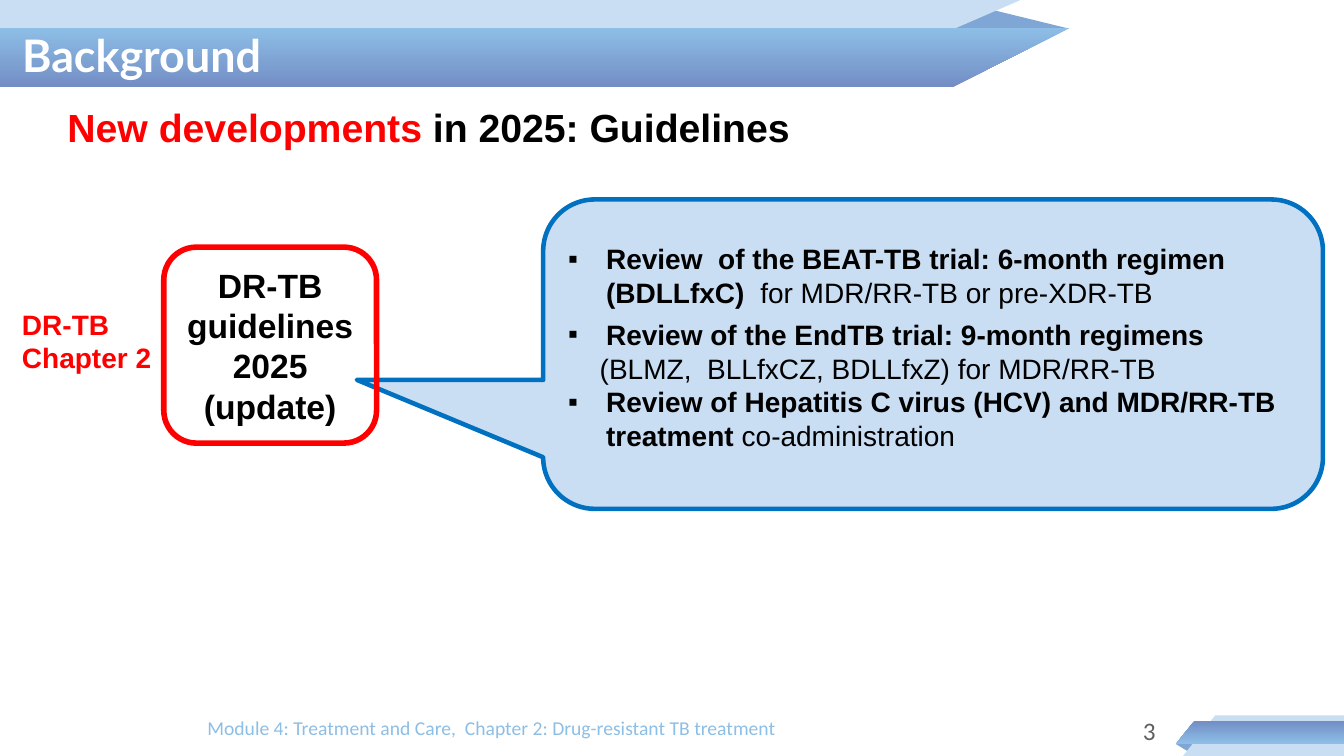
from pptx import Presentation
from pptx.dml.color import RGBColor
from pptx.enum.shapes import MSO_SHAPE
from pptx.enum.text import MSO_ANCHOR, MSO_AUTO_SIZE, PP_ALIGN
from pptx.oxml.ns import qn
from pptx.util import Pt
from lxml.etree import SubElement

COLORS = {
    "pale": "C9DDF3",
    "sky": "8DBEE6",
    "fold": "80A6D5",
    "indigo": "738EC5",
    "outline": "0070C0",
    "red": "FF0000",
    "black": "000000",
    "white": "FFFFFF",
    "gray": "606060",
}


def color(name):
    return RGBColor.from_string(COLORS[name])


def add_ribbon_part(page, points, *fills):
    """Draw a borderless polygon; two fills give a gradient from top to bottom."""
    corners = [(Pt(x), Pt(y)) for x, y in points]
    builder = page.shapes.build_freeform(*corners[0], scale=1.0)
    builder.add_line_segments(corners[1:], close=True)
    part = builder.convert_to_shape()
    part.shadow.inherit = False
    part.line.fill.background()
    if len(fills) == 1:
        part.fill.solid()
        part.fill.fore_color.rgb = color(fills[0])
    else:
        part.fill.gradient()
        part.fill.gradient_angle = 270
        for stop, name in zip(part.fill.gradient_stops, fills):
            stop.color.rgb = color(name)


def place(shape, left, top, width, height):
    shape.left, shape.top = Pt(left), Pt(top)
    shape.width, shape.height = Pt(width), Pt(height)


def set_frame(shape, anchor=MSO_ANCHOR.TOP):
    frame = shape.text_frame
    frame.word_wrap = True
    frame.auto_size = MSO_AUTO_SIZE.NONE
    frame.vertical_anchor = anchor
    return frame


def set_bullet(para, left, bullet=None):
    """Set the indent, with a hanging bullet or none."""
    properties = para._p.get_or_add_pPr()
    properties.set("marL", str(Pt(left)))
    properties.set("indent", str(Pt(-left if bullet else 0)))
    if bullet:
        SubElement(properties, qn("a:buFont")).set("typeface", "Arial")
        SubElement(properties, qn("a:buChar")).set("char", bullet)
    else:
        SubElement(properties, qn("a:buNone"))


def add_runs(para, size, *runs, font="Arial", align=PP_ALIGN.LEFT):
    """Add runs given as (text, colour name, bold)."""
    para.alignment = align
    para.space_before = Pt(0)
    for text, name, bold in runs:
        span = para.add_run()
        span.text = text
        span.font.name = font
        span.font.size = Pt(size)
        span.font.bold = bold
        span.font.color.rgb = color(name)


def add_label(page, area, size, lines, name, bold=False, font="Arial", align=PP_ALIGN.LEFT):
    box = page.shapes.add_textbox(*map(Pt, area))
    frame = set_frame(box)
    for index, line in enumerate(lines):
        para = frame.add_paragraph() if index else frame.paragraphs[0]
        add_runs(para, size, (line, name, bold), font=font, align=align)


def add_outlined_shape(page, kind, area, line_name, line_width, fill_name=None):
    shape = page.shapes.add_shape(kind, *map(Pt, area))
    shape.shadow.inherit = False
    shape.line.color.rgb = color(line_name)
    shape.line.width = Pt(line_width)
    if fill_name:
        shape.fill.solid()
        shape.fill.fore_color.rgb = color(fill_name)
    else:
        shape.fill.background()
    return shape


def add_ribbons(page):
    add_ribbon_part(page, [(679, 20.5), (706.5, 6.5), (763.5, 20.5)], "fold")
    add_ribbon_part(page, [(0, 0), (729, 0), (586, 62), (0, 62)], "pale")
    add_ribbon_part(page, [(0, 20), (764, 20), (680.5, 62), (0, 62)], "sky", "indigo")
    add_ribbon_part(page, [(840, 531.5), (853, 531.5), (849, 537)], "fold")
    add_ribbon_part(page, [(845, 540), (868, 511), (960, 511), (960, 540)], "pale")
    add_ribbon_part(page, [(840, 531.5), (853, 515), (960, 515), (960, 531.5)], "indigo", "sky")


def fill_placeholders(page):
    title, body = page.placeholders
    for holder in (title, body):
        holder.element.getparent().append(holder.element)

    place(title, 8.6, 7, 577, 64)
    para = set_frame(title, MSO_ANCHOR.MIDDLE).paragraphs[0]
    add_runs(para, 32, ("Background", "white", True), font="Lato")

    place(body, 41, 70, 770, 34)
    para = set_frame(body).paragraphs[0]
    set_bullet(para, 0)
    add_runs(para, 28, ("New developments ", "red", True),
             ("in 2025: Guidelines", "black", True))


def add_review_callout(page):
    callout = add_outlined_shape(page, MSO_SHAPE.ROUNDED_RECTANGULAR_CALLOUT,
                                 (388, 142.5, 557, 221), "outline", 3.25, "pale")
    for index, value in enumerate((-0.739, 0.083, 0.167)):
        callout.adjustments[index] = value
    frame = set_frame(callout, MSO_ANCHOR.MIDDLE)
    frame.margin_bottom = Pt(14)
    reviews = [
        (27, "▪", 6, "Review  of the BEAT-TB trial: 6-month regimen (BDLLfxC)  ",
         "for MDR/RR-TB or pre-XDR-TB"),
        (27, "▪", 0, "Review of the EndTB trial: 9-month regimens", ""),
        (22.5, None, 0, "", "(BLMZ,  BLLfxCZ, BDLLfxZ) for MDR/RR-TB"),
        (27, "▪", 0, "Review of Hepatitis C virus (HCV) and MDR/RR-TB treatment ",
         "co-administration"),
    ]
    for index, (left, bullet, after, strong, plain) in enumerate(reviews):
        para = frame.add_paragraph() if index else frame.paragraphs[0]
        set_bullet(para, left, bullet)
        para.space_after = Pt(after)
        runs = [(strong, "black", True), (plain, "black", False)]
        add_runs(para, 20, *[run for run in runs if run[0]])


def add_guidelines_box(page):
    box = add_outlined_shape(page, MSO_SHAPE.ROUNDED_RECTANGLE,
                             (117, 176.5, 152, 140), "red", 4)
    para = set_frame(box, MSO_ANCHOR.MIDDLE).paragraphs[0]
    add_runs(para, 24, ("DR-TB guidelines 2025 (update)", "black", True),
             align=PP_ALIGN.CENTER)


def main():
    deck = Presentation()
    deck.slide_width, deck.slide_height = Pt(960), Pt(540)
    page = deck.slides.add_slide(deck.slide_layouts[1])
    add_ribbons(page)
    fill_placeholders(page)
    add_review_callout(page)
    add_guidelines_box(page)
    add_label(page, (8.6, 216, 109, 55.5), 20, ["DR-TB", "Chapter 2"], "red", bold=True)
    add_label(page, (141, 507.5, 577, 29), 14,
              ["Module 4: Treatment and Care,  Chapter 2: Drug-resistant TB treatment"],
              "sky", font="Calibri")
    add_label(page, (729.5, 507.5, 103, 29), 18, ["3"], "gray",
              font="Calibri", align=PP_ALIGN.RIGHT)
    deck.save("out.pptx")


if __name__ == "__main__":
    main()
